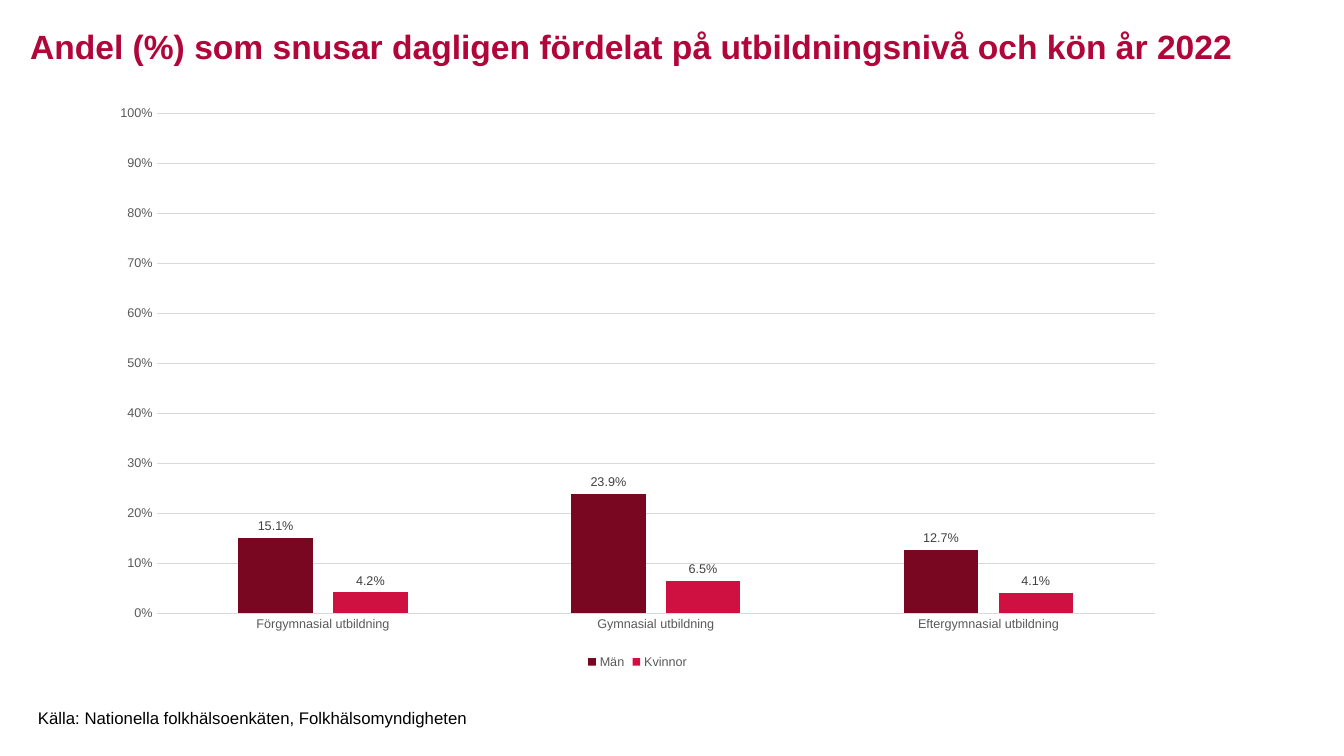
from pptx import Presentation
from pptx.chart import data
from pptx.dml.color import RGBColor
from pptx.enum import chart as kinds, text
from pptx.util import Pt

FONT = "Arial"
CERISE = RGBColor(0xB1, 0x06, 0x3A)
WINE = RGBColor(0x79, 0x07, 0x21)
RED = RGBColor(0xCE, 0x11, 0x41)
BLACK = RGBColor(0, 0, 0)
DARK = RGBColor(0x40, 0x40, 0x40)
GREY = RGBColor(0x59, 0x59, 0x59)
PALE = RGBColor(0xD9, 0xD9, 0xD9)

LEVELS = ["Förgymnasial utbildning", "Gymnasial utbildning",
          "Eftergymnasial utbildning"]
SHARES = [("Män", (0.151, 0.239, 0.127), WINE),
          ("Kvinnor", (0.042, 0.065, 0.041), RED)]


def style(font, size, color, bold=False):
    font.name = FONT
    font.size = Pt(size)
    font.bold = bold
    font.color.rgb = color


def rule(line):
    line.color.rgb = PALE
    line.width = Pt(0.75)


def add_text(slide, box, words, size, color, bold=False, wrap=True):
    frame = slide.shapes.add_textbox(*map(Pt, box)).text_frame
    frame.word_wrap = wrap
    frame.auto_size = text.MSO_AUTO_SIZE.SHAPE_TO_FIT_TEXT
    para = frame.paragraphs[0]
    para.text = words
    style(para.font, size, color, bold)


def add_bars(slide, box):
    table = data.CategoryChartData(number_format="0.0%")
    table.categories = LEVELS
    for name, shares, _ in SHARES:
        table.add_series(name, shares)
    chart = slide.shapes.add_chart(
        kinds.XL_CHART_TYPE.COLUMN_CLUSTERED, *map(Pt, box), table).chart
    style(chart.font, 10, BLACK)
    chart.has_title = False

    # Legend
    chart.has_legend = True
    chart.legend.position = kinds.XL_LEGEND_POSITION.BOTTOM
    chart.legend.include_in_layout = False
    style(chart.legend.font, 9, GREY)

    # Axes
    cat, val = chart.category_axis, chart.value_axis
    for axis in (cat, val):
        axis.major_tick_mark = kinds.XL_TICK_MARK.NONE
        axis.minor_tick_mark = kinds.XL_TICK_MARK.NONE
        style(axis.tick_labels.font, 9, GREY)
    rule(cat.format.line)
    val.format.line.fill.background()
    val.minimum_scale, val.maximum_scale, val.major_unit = 0, 1, 0.1
    val.tick_labels.number_format = "0%"
    val.tick_labels.number_format_is_linked = False
    val.has_major_gridlines = True
    rule(val.major_gridlines.format.line)

    # Bars and their labels
    plot = chart.plots[0]
    plot.gap_width, plot.overlap = 219, -27
    plot.vary_by_categories = False
    for series, (_, _, color) in zip(plot.series, SHARES):
        series.invert_if_negative = False
        series.format.fill.solid()
        series.format.fill.fore_color.rgb = color
        tags = series.data_labels
        tags.show_value = True
        tags.number_format = "0.0%"
        tags.number_format_is_linked = False
        tags.position = kinds.XL_LABEL_POSITION.OUTSIDE_END
        style(tags.font, 9, DARK)


def main():
    deck = Presentation()
    deck.slide_width, deck.slide_height = Pt(960), Pt(540)
    slide = deck.slides.add_slide(deck.slide_layouts[6])
    # Heading
    add_text(slide, (14.4, 15.1, 910, 36),
             "Andel (%) som snusar dagligen fördelat på utbildningsnivå"
             " och kön år 2022", 24, CERISE, bold=True)
    # Chart
    add_bars(slide, (70.6, 67.7, 769.7, 413.3))
    # Source line
    add_text(slide, (20, 502, 323.3, 21.6),
             "Källa: Nationella folkhälsoenkäten, Folkhälsomyndigheten",
             12, BLACK, wrap=False)
    deck.save("out.pptx")


if __name__ == "__main__":
    main()
